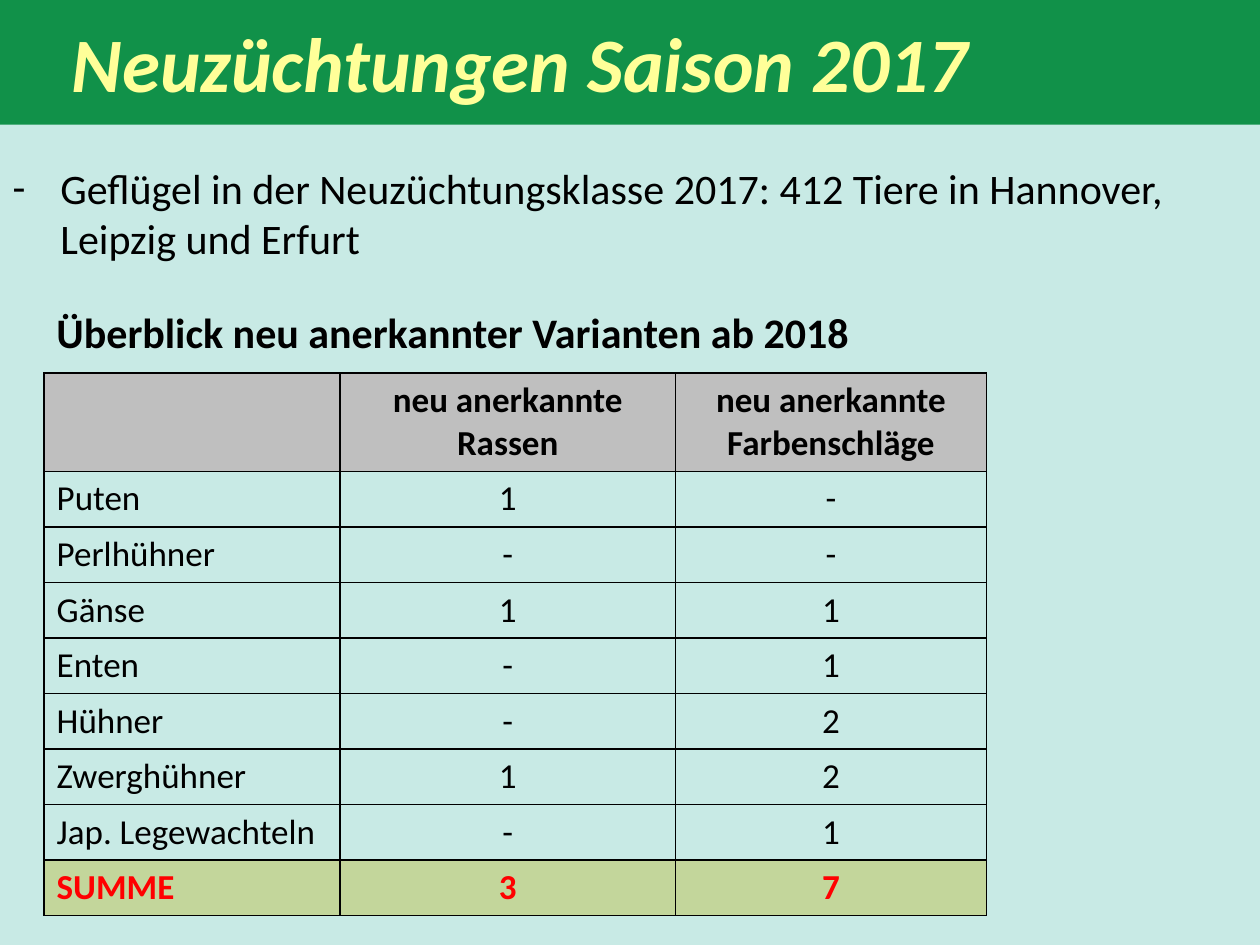
from dataclasses import dataclass

import pptx
import pptx.dml.color
import pptx.enum.text
import pptx.oxml
import pptx.oxml.ns
import pptx.util
from pptx.util import Inches

ALIGN = pptx.enum.text.PP_ALIGN
ANCHOR = pptx.enum.text.MSO_ANCHOR


@dataclass(frozen=True)
class Theme:
    font: str = "Calibri"
    background: str = "C8EAE5"
    banner: str = "119149"
    title: str = "FFFF99"
    text: str = "000000"
    header: str = "BFBFBF"
    total: str = "C3D69B"
    total_text: str = "FF0000"
    title_size: int = 44
    body_size: int = 24
    table_size: int = 20


THEME = Theme()
HEADINGS = ["", "neu anerkannte\nRassen", "neu anerkannte Farbenschläge"]
VARIANTS = [
    ["Puten", "1", "-"],
    ["Perlhühner", "-", "-"],
    ["Gänse", "1", "1"],
    ["Enten", "-", "1"],
    ["Hühner", "-", "2"],
    ["Zwerghühner", "1", "2"],
    ["Jap. Legewachteln", "-", "1"],
]
TOTALS = ["SUMME", "3", "7"]
COLUMN_WIDTHS = [2.35, 2.66, 2.47]
HEADER_HEIGHT, ROW_HEIGHT = 0.77, 0.43


def rgb(value):
    return pptx.dml.color.RGBColor.from_string(value)


def paint(fill, color):
    fill.solid()
    fill.fore_color.rgb = rgb(color)


def place(item, left, top, width, height):
    item.left, item.top = Inches(left), Inches(top)
    item.width, item.height = Inches(width), Inches(height)


def write(frame, text, size=THEME.body_size, color=THEME.text, bold=False,
          italic=False, align=ALIGN.LEFT):
    frame.text = text
    for paragraph in frame.paragraphs:
        paragraph.alignment = align
        paragraph.space_before = pptx.util.Pt(0)
        for run in paragraph.runs:
            font = run.font
            font.name, font.size = THEME.font, pptx.util.Pt(size)
            font.bold, font.italic = bold, italic
            font.color.rgb = rgb(color)


def add_title(slide, text):
    title = slide.shapes.title
    place(title, 0, 0, 10, 0.99)
    paint(title.fill, THEME.banner)
    frame = title.text_frame
    frame.auto_size = pptx.enum.text.MSO_AUTO_SIZE.NONE
    frame.vertical_anchor = ANCHOR.BOTTOM
    frame.margin_left, frame.margin_right = Inches(0.57), Inches(0.18)
    frame.margin_top, frame.margin_bottom = Inches(0.05), Inches(0.13)
    write(frame, text, size=THEME.title_size, color=THEME.title, bold=True, italic=True)


def add_dash_list(slide, text):
    body = slide.placeholders[1]
    place(body, 0, 1.24, 9.8, 0.91)
    body.text_frame.auto_size = pptx.enum.text.MSO_AUTO_SIZE.NONE
    write(body.text_frame, text)
    for paragraph in body.text_frame.paragraphs:
        properties = paragraph._p.get_or_add_pPr()
        properties.set("marL", str(Inches(0.38)))
        properties.set("indent", str(-Inches(0.38)))
        for tag, name, value in (("buFont", "typeface", THEME.font), ("buChar", "char", "-")):
            bullet = pptx.oxml.parse_xml(
                f'<a:{tag} {pptx.oxml.ns.nsdecls("a")} {name}="{value}"/>')
            properties.append(bullet)


def add_heading(slide, text):
    heading = slide.shapes.add_textbox(Inches(0.35), Inches(2.38), Inches(9.8), Inches(0.5))
    heading.text_frame.word_wrap = True
    write(heading.text_frame, text, bold=True)


def outline(cell):
    properties = cell._tc.get_or_add_tcPr()
    for position, side in enumerate("LRTB"):
        border = pptx.oxml.parse_xml(
            f'<a:ln{side} {pptx.oxml.ns.nsdecls("a")} w="{pptx.util.Pt(1)}">'
            f'<a:solidFill><a:srgbClr val="{THEME.text}"/></a:solidFill></a:ln{side}>')
        properties.insert(position, border)


def fill_row(cells, texts, fill=None, label_align=ALIGN.LEFT, **text_format):
    for column, (cell, text) in enumerate(zip(cells, texts)):
        if fill:
            paint(cell.fill, fill)
        else:
            cell.fill.background()
        outline(cell)
        write(cell.text_frame, text, size=THEME.table_size,
              align=ALIGN.CENTER if column else label_align, **text_format)


def add_variant_table(slide):
    heights = [HEADER_HEIGHT] + [ROW_HEIGHT] * (len(VARIANTS) + 1)
    table = slide.shapes.add_table(
        len(heights), len(COLUMN_WIDTHS), Inches(0.35), Inches(2.96),
        Inches(sum(COLUMN_WIDTHS)), Inches(sum(heights))).table
    table.horz_banding = False
    for column, width in zip(table.columns, COLUMN_WIDTHS):
        column.width = Inches(width)
    for row, height in zip(table.rows, heights):
        row.height = Inches(height)
    header, *variants, total = table.rows
    fill_row(header.cells, HEADINGS, fill=THEME.header, bold=True)
    for row, texts in zip(variants, VARIANTS):
        fill_row(row.cells, texts)
    fill_row(total.cells, TOTALS, fill=THEME.total, color=THEME.total_text, bold=True)


def main():
    deck = pptx.Presentation()
    deck.slide_width, deck.slide_height = Inches(10), Inches(7.5)
    slide = deck.slides.add_slide(deck.slide_layouts[1])
    paint(slide.background.fill, THEME.background)
    add_title(slide, "Neuzüchtungen Saison 2017")
    add_dash_list(slide, "Geflügel in der Neuzüchtungsklasse 2017: "
                         "412 Tiere in Hannover, Leipzig und Erfurt")
    add_variant_table(slide)
    add_heading(slide, "Überblick neu anerkannter Varianten ab 2018")
    deck.save("out.pptx")


if __name__ == "__main__":
    main()
